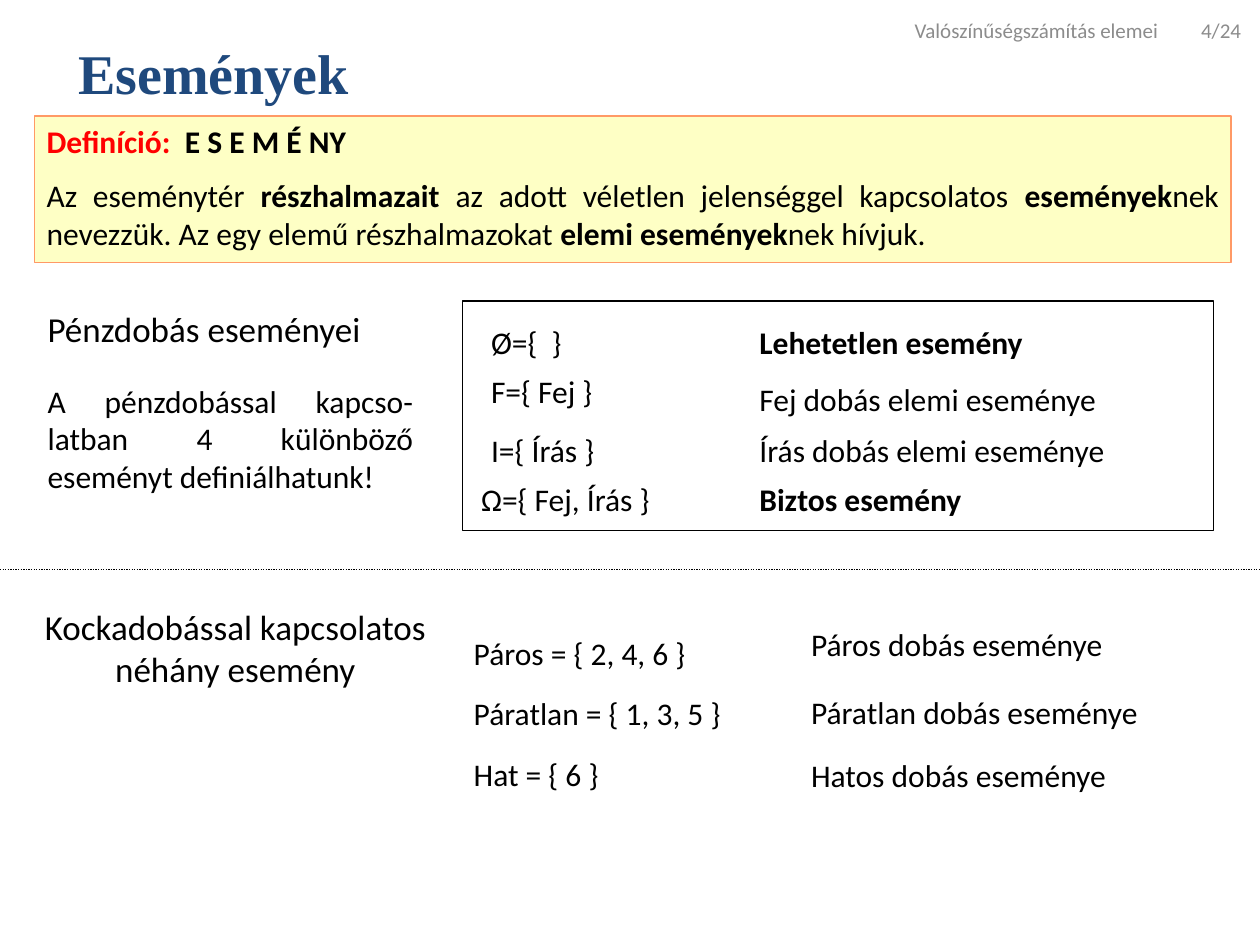
from lxml.etree import SubElement
from pptx import Presentation
from pptx.dml.color import RGBColor
from pptx.enum.dml import MSO_LINE
from pptx.enum.shapes import MSO_CONNECTOR, MSO_SHAPE
from pptx.enum.text import MSO_ANCHOR, MSO_AUTO_SIZE, PP_ALIGN
from pptx.oxml.ns import qn
from pptx.util import Cm, Pt

BLACK = RGBColor(0x00, 0x00, 0x00)
NAVY = RGBColor(0x1F, 0x49, 0x7D)
RED = RGBColor(0xFF, 0x00, 0x00)
CREAM = RGBColor(0xFE, 0xFF, 0xC5)
ORANGE = RGBColor(0xFF, 0x99, 0x66)
GREY = RGBColor(0x8C, 0x8C, 0x8C)

ROW_H = 1.02
COIN_ROWS = [
    (9.65, 6.38, 2.79, "Ø={  }", 6.38, 7.21, "Lehetetlen esemény", True),
    (9.65, 7.37, 3.4, "F={ Fej }", 7.54, 8.61, "Fej dobás elemi eseménye", False),
    (9.65, 8.56, 3.4, "I={ Írás }", 8.56, 8.61, "Írás dobás elemi eseménye", False),
    (9.45, 9.55, 4.6, "Ω={ Fej, Írás }", 9.55, 7.21, "Biztos esemény", True),
]
DICE_ROWS = [
    ("Páros = { 2, 4, 6 }", 4.8, 12.47, 7.21, "Páros dobás eseménye"),
    ("Páratlan = { 1, 3, 5 }", 5.59, 13.84, 8.61, "Páratlan dobás eseménye"),
    ("Hat = { 6 }", 5.59, 15.11, 7.21, "Hatos dobás eseménye"),
]


def add_run(p, text, size=18, bold=False, color=BLACK, font="Calibri"):
    r = p.add_run()
    r.text = text
    r.font.name = font
    r.font.size = Pt(size)
    r.font.bold = bold
    r.font.color.rgb = color


def add_title(s, text):
    sp = s.shapes.title
    sp.left, sp.top, sp.width, sp.height = Cm(1.32), Cm(0.76), Cm(21.51), Cm(1.5)
    tf = sp.text_frame
    tf.auto_size = MSO_AUTO_SIZE.NONE
    tf.vertical_anchor = MSO_ANCHOR.MIDDLE
    tf.margin_top, tf.margin_bottom = Cm(0.03), Cm(0.13)
    p = tf.paragraphs[0]
    p.alignment = PP_ALIGN.LEFT
    add_run(p, text, 32, True, NAVY, "Times New Roman")


def add_text(s, x, y, w, h, text, size=18, bold=False, color=BLACK, align=PP_ALIGN.LEFT):
    tf = s.shapes.add_textbox(Cm(x), Cm(y), Cm(w), Cm(h)).text_frame
    tf.word_wrap = True
    p = tf.paragraphs[0]
    p.alignment = align
    add_run(p, text, size, bold, color)
    return tf


def add_header(s):
    tf = add_text(s, 18.19, 0.1, 7.14, ROW_H, "Valószínűségszámítás elemei\t4/24", 12, color=GREY)
    tf.vertical_anchor = MSO_ANCHOR.MIDDLE
    tabs = SubElement(tf.paragraphs[0]._p.get_or_add_pPr(), qn("a:tabLst"))
    SubElement(tabs, qn("a:tab"), pos=str(Cm(6.58)), algn="r")


def add_box(s, x, y, w, h, line, fill=None):
    sp = s.shapes.add_shape(MSO_SHAPE.RECTANGLE, Cm(x), Cm(y), Cm(w), Cm(h))
    sp.shadow.inherit = False
    if fill is None:
        sp.fill.background()
    else:
        sp.fill.solid()
        sp.fill.fore_color.rgb = fill
    sp.line.color.rgb = line
    sp.line.width = Pt(0.75)
    return sp


def add_definition(s):
    tf = add_box(s, 0.69, 2.34, 24.13, 2.95, ORANGE, CREAM).text_frame
    tf.word_wrap = True
    tf.vertical_anchor = MSO_ANCHOR.TOP
    p = tf.paragraphs[0]
    p.alignment = PP_ALIGN.LEFT
    add_run(p, "Definíció:", bold=True, color=RED)
    add_run(p, "  E S E M É NY", bold=True)
    p = tf.add_paragraph()
    p.alignment = PP_ALIGN.JUSTIFY
    p.space_before = Pt(9)
    for text, bold in [
        ("Az eseménytér ", False),
        ("részhalmazait", True),
        (" az adott véletlen jelenséggel kapcsolatos ", False),
        ("események", True),
        ("nek nevezzük. Az egy elemű részhalmazokat ", False),
        ("elemi események", True),
        ("nek hívjuk.", False),
    ]:
        add_run(p, text, bold=bold)


def add_divider(s, y):
    c = s.shapes.add_connector(MSO_CONNECTOR.STRAIGHT, Cm(0), Cm(y), Cm(25.4), Cm(y))
    c.line.color.rgb = BLACK
    c.line.width = Pt(0.75)
    c.line.dash_style = MSO_LINE.ROUND_DOT
    SubElement(c._element.spPr, qn("a:effectLst"))


def add_coin_events(s):
    add_text(s, 0.71, 6.07, 8.13, 1.09, "Pénzdobás eseményei", 20)
    add_text(s, 0.71, 7.57, 7.87, 2.54,
             "A pénzdobással kapcso-latban 4 különböző eseményt definiálhatunk!",
             align=PP_ALIGN.JUSTIFY)
    add_box(s, 9.32, 6.07, 15.14, 4.62, BLACK)
    for x, y, w, event, name_y, name_w, name, bold in COIN_ROWS:
        add_text(s, x, y, w, ROW_H, event)
        add_text(s, 15.06, name_y, name_w, ROW_H, name, bold=bold)


def add_dice_events(s):
    add_text(s, 0.2, 12.09, 9.09, 1.96, "Kockadobással kapcsolatos néhány esemény",
             20, align=PP_ALIGN.CENTER)
    for i, (event, w, name_y, name_w, name) in enumerate(DICE_ROWS):
        add_text(s, 9.3, 12.65 + 1.22 * i, w, ROW_H, event)
        add_text(s, 16.1, name_y, name_w, ROW_H, name)


def main():
    prs = Presentation()
    prs.slide_width, prs.slide_height = Cm(25.4), Cm(19.05)
    s = prs.slides.add_slide(prs.slide_layouts[5])
    add_title(s, "Események")
    add_definition(s)
    add_coin_events(s)
    add_divider(s, 11.48)
    add_dice_events(s)
    add_header(s)
    prs.save("out.pptx")


if __name__ == "__main__":
    main()
